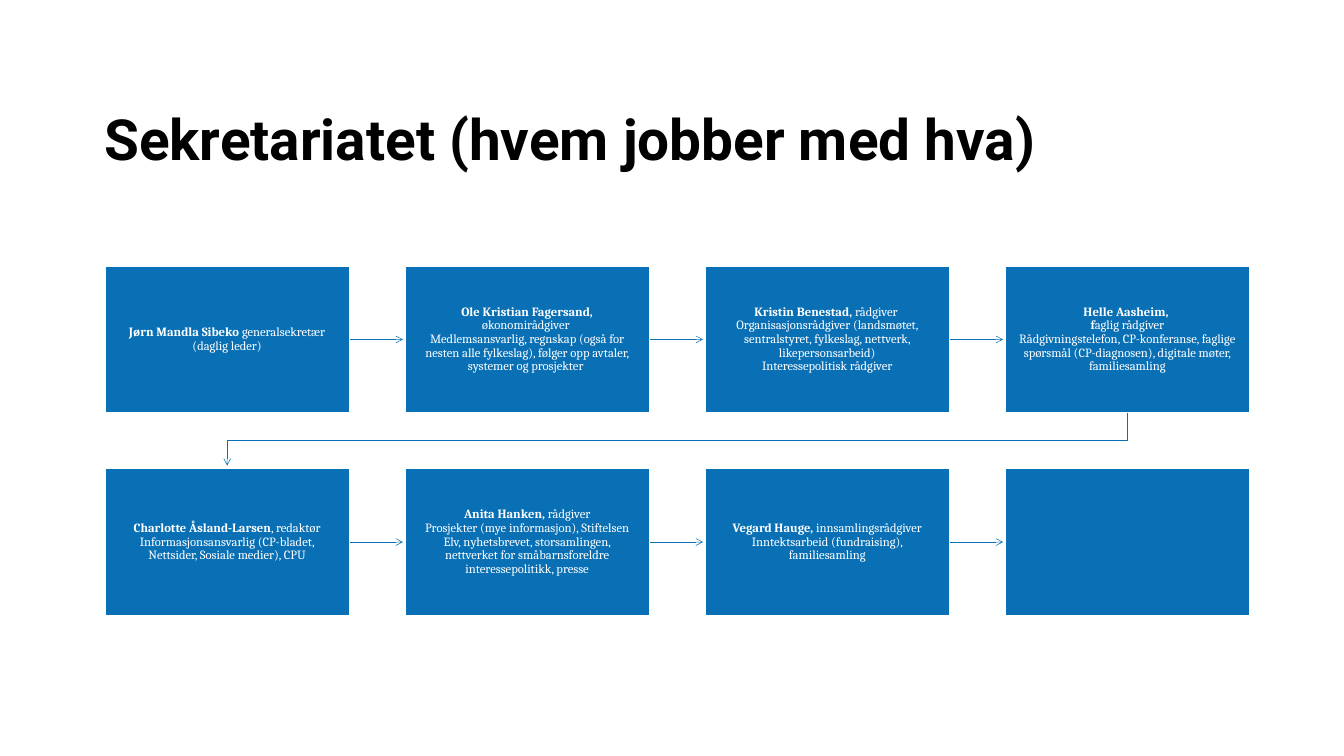
from copy import deepcopy

from pptx import Presentation
from pptx.dml.color import RGBColor
from pptx.enum.shapes import MSO_CONNECTOR as CONN, MSO_SHAPE as SHAPE
from pptx.enum.text import MSO_ANCHOR as ANCHOR, PP_ALIGN as ALIGN
from pptx.oxml.ns import qn
from pptx.util import Inches, Pt
from lxml.etree import SubElement

COLORS = {"box": "0970B5", "light": "FFFFFF", "title": "000000"}
LEFT, TOP, WIDTH, HEIGHT = 1.39, 3.52, 3.23, 1.94
STEP_X, STEP_Y, COLUMNS = 3.97, 2.68, 4
STAFF = [
    ("Jørn Mandla Sibeko ", "generalsekretær (daglig leder)"),
    ("Ole Kristian Fagersand, ",
     "økonomirådgiver \nMedlemsansvarlig, regnskap (også for nesten alle "
     "fylkeslag), følger opp avtaler, systemer og prosjekter "),
    ("Kristin Benestad, ",
     "rådgiver \nOrganisasjonsrådgiver (landsmøtet, sentralstyret, fylkeslag, "
     "nettverk, likepersonsarbeid)\nInteressepolitisk rådgiver"),
    ("Helle Aasheim, \nf",
     "aglig rådgiver\nRådgivningstelefon, CP-konferanse, faglige spørsmål "
     "(CP-diagnosen), digitale møter, familiesamling"),
    ("Charlotte Åsland-Larsen",
     ", redaktør\nInformasjonsansvarlig (CP-bladet, Nettsider, Sosiale medier), CPU"),
    ("Anita Hanken, ",
     "rådgiver\nProsjekter (mye informasjon), Stiftelsen Elv, nyhetsbrevet, "
     "storsamlingen, nettverket for småbarnsforeldre\ninteressepolitikk, presse"),
    ("Vegard Hauge, ",
     "innsamlingsrådgiver\nInntektsarbeid (fundraising), familiesamling"),
    None,
]


class Deck:
    """Holds the style and the current slide, and draws each kind of element."""

    def __init__(self, prs):
        self.s = prs.slides.add_slide(prs.slide_layouts[6])

    def color(self, name):
        return RGBColor.from_string(COLORS[name])

    def frame(self, sp, anchor, inset_x=0, inset_y=0):
        tf = sp.text_frame
        tf.word_wrap = True
        tf.vertical_anchor = anchor
        tf.margin_left = tf.margin_right = Inches(inset_x)
        tf.margin_top = tf.margin_bottom = Inches(inset_y)
        p = tf.paragraphs[0]
        p.line_spacing = 0.9
        return p

    def run(self, p, text, font, size, color, bold):
        for i, line in enumerate(text.split("\n")):
            if i:
                p.add_line_break()
            r = p.add_run()
            r.text = line
            r.font.name, r.font.size, r.font.bold = font, Pt(size), bold
            r.font.color.rgb = self.color(color)
            if i:
                r._r.getprevious().append(deepcopy(r._r.rPr))

    def title(self, text, x, y, w, h):
        sp = self.s.shapes.add_textbox(Inches(x), Inches(y), Inches(w), Inches(h))
        self.run(self.frame(sp, ANCHOR.BOTTOM), text, "Roboto", 54, "title", True)

    def box(self, x, y, person):
        sp = self.s.shapes.add_shape(
            SHAPE.RECTANGLE, Inches(x), Inches(y), Inches(WIDTH), Inches(HEIGHT))
        sp.shadow.inherit = False
        sp.fill.solid()
        sp.fill.fore_color.rgb = self.color("box")
        sp.line.color.rgb = self.color("light")
        sp.line.width = Pt(1)
        if person:
            p = self.frame(sp, ANCHOR.MIDDLE, 0.16, 0.17)
            p.alignment = ALIGN.CENTER
            for text, bold in zip(person, (True, False)):
                self.run(p, text, "Cambria", 12, "light", bold)

    def arrow_line(self, sp):
        sp.line.color.rgb = self.color("box")
        sp.line.width = Pt(0.5)
        SubElement(sp.line._get_or_add_ln(), qn("a:tailEnd"), type="arrow")

    def arrow(self, x, y, length):
        sp = self.s.shapes.add_connector(
            CONN.STRAIGHT, Inches(x), Inches(y), Inches(x + length), Inches(y))
        self.arrow_line(sp)
        SubElement(sp._element.spPr, qn("a:effectLst"))

    def bent_arrow(self, points):
        start, *rest = [(Inches(x), Inches(y)) for x, y in points]
        builder = self.s.shapes.build_freeform(*start)
        builder.add_line_segments(rest, close=False)
        sp = builder.convert_to_shape()
        sp.fill.background()
        self.arrow_line(sp)
        sp.shadow.inherit = False


def main():
    prs = Presentation()
    prs.slide_width, prs.slide_height = Inches(17.78), Inches(10)
    deck = Deck(prs)
    deck.title("Sekretariatet (hvem jobber med hva)", 1.38, 0.32, 15.16, 1.97)
    for i, person in enumerate(STAFF):
        row, col = divmod(i, COLUMNS)
        x, y = LEFT + col * STEP_X, TOP + row * STEP_Y
        if col < COLUMNS - 1:
            deck.arrow(x + WIDTH, y + HEIGHT / 2, 0.71)
        deck.box(x, y, person)
    first = LEFT + WIDTH / 2
    last = first + (COLUMNS - 1) * STEP_X
    bottom, middle, end = TOP + HEIGHT, TOP + (STEP_Y + HEIGHT) / 2, TOP + STEP_Y - 0.04
    deck.bent_arrow([(last, bottom), (last, middle), (first, middle), (first, end)])
    prs.save("out.pptx")


if __name__ == "__main__":
    main()
